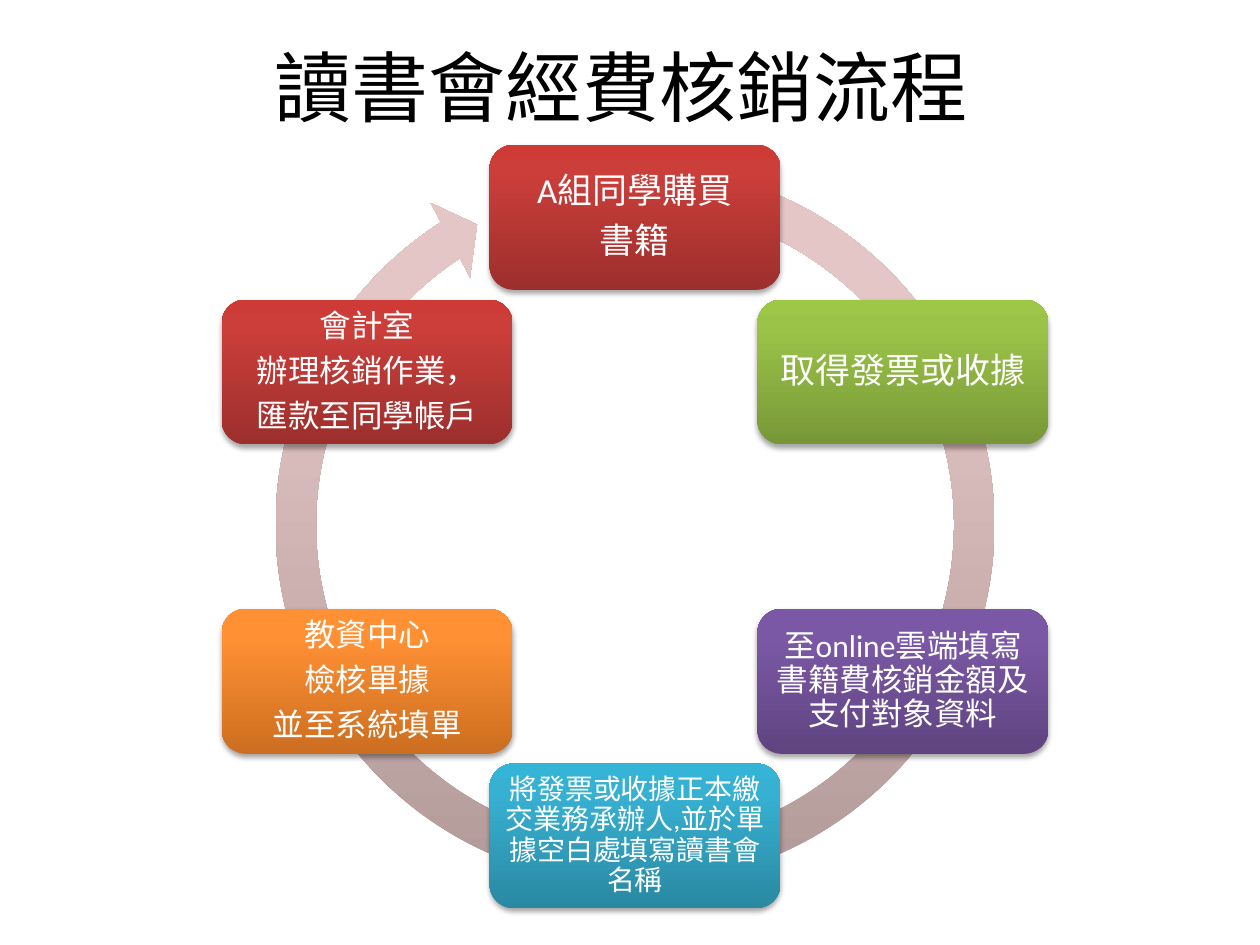
from copy import deepcopy
from math import cos, radians, sin

from lxml import etree
from pptx import Presentation
from pptx.dml.color import RGBColor
from pptx.enum import shapes, text
from pptx.oxml import ns
from pptx.util import Inches, Pt

WHITE = RGBColor(0xFF, 0xFF, 0xFF)
BLACK = RGBColor(0, 0, 0)


def shades(*codes):
    return [RGBColor.from_string(code) for code in codes]


# Gradients from bottom to top
RED = shades("9C2F2D", "CB3E3A", "CE3B37")
GREEN = shades("779737", "9BC348", "9DC746")
PURPLE = shades("5F4480", "7B58A6", "7C57A8")
BLUE = shades("2A88A2", "37B1D2", "34B4D6")
ORANGE = shades("CC6E20", "FF9034", "FF9136")
PINK = shades("B09998", "E5C6C6", "E6C7C6")
STOPS = (0, 0.8, 1)

# Content: steps run clockwise from the top
TITLE = "讀書會經費核銷流程"
STEPS = [
    (["A組同學購買", "書籍"], 20, RED),
    (["取得發票或收據"], 20, GREEN),
    (["至online雲端填寫書籍費核銷金額及支付對象資料"], 18, PURPLE),
    (["將發票或收據正本繳交業務承辦人,並於單據空白處填寫讀書會名稱"], 16, BLUE),
    (["教資中心", "檢核單據", "並至系統填單"], 18, ORANGE),
    (["會計室", "辦理核銷作業，", "匯款至同學帳戶"], 18, RED),
]

# Geometry in inches
MID_X, MID_Y, RADIUS = 5.04, 4.18, 2.455
BOX_W, BOX_H = 2.31, 1.15
RING = 6.05
ARROW = (0.053, 3.126, 142.221, 171.305, 0.055)


def paint(shape, colors):
    """Fill with a vertical gradient, without outline or shadow."""
    shape.fill.gradient()
    shape.fill.gradient_angle = 90
    stops = shape._element.spPr.find(".//" + ns.qn("a:gsLst"))
    stops.append(deepcopy(stops[-1]))
    for stop, place, color in zip(shape.fill.gradient_stops, STOPS, colors):
        stop.position = place
        stop.color.rgb = color
    shape.line.fill.background()
    shape.shadow.inherit = False


def shade(shape):
    """Add a soft shadow below the shape."""
    effects = shape._element.spPr.find(ns.qn("a:effectLst"))
    drop = etree.SubElement(
        effects, ns.qn("a:outerShdw"), blurRad=str(Pt(3.1)), dist=str(Pt(1.8)),
        dir="5400000", rotWithShape="0")
    color = etree.SubElement(drop, ns.qn("a:srgbClr"), val="000000")
    etree.SubElement(color, ns.qn("a:alpha"), val="35000")


def add_run(para, words, size, font, color):
    run = para.add_run()
    run.text = words
    run.font.size = Pt(size)
    run.font.name = font
    run.font.color.rgb = color
    return run


def add_step(slide, index, lines, size, colors):
    angle = radians(360 / len(STEPS) * index)
    left = MID_X + RADIUS * sin(angle) - BOX_W / 2
    top = MID_Y - RADIUS * cos(angle) - BOX_H / 2
    box = slide.shapes.add_shape(
        shapes.MSO_SHAPE.ROUNDED_RECTANGLE,
        Inches(left), Inches(top), Inches(BOX_W), Inches(BOX_H))
    paint(box, colors)
    shade(box)
    frame = box.text_frame
    frame.word_wrap = True
    frame.vertical_anchor = text.MSO_ANCHOR.MIDDLE
    inset = Inches(0.08 if size == 20 else 0.07)
    frame.margin_left = frame.margin_right = inset
    frame.margin_top = frame.margin_bottom = inset
    for row, words in enumerate(lines):
        para = frame.add_paragraph() if row else frame.paragraphs[0]
        para.alignment = text.PP_ALIGN.CENTER
        para.line_spacing = 0.9
        para.space_after = Pt(0.35 * size)
        add_run(para, words, size, "Calibri", WHITE)


def main():
    deck = Presentation()
    deck.slide_width, deck.slide_height = Inches(10), Inches(7.5)
    slide = deck.slides.add_slide(deck.slide_layouts[5])

    # Title
    title = slide.shapes.title
    title.left, title.top = Inches(0.43), Inches(0.13)
    title.width, title.height = Inches(9), Inches(1.1)
    frame = title.text_frame
    frame.vertical_anchor = text.MSO_ANCHOR.MIDDLE
    para = frame.paragraphs[0]
    para.alignment = text.PP_ALIGN.CENTER
    font = "Noto Sans CJK SC"
    run = add_run(para, TITLE, 44, font, BLACK)
    etree.SubElement(run.font._element, ns.qn("a:ea"), typeface=font)

    # Ring arrow behind the steps
    ring = slide.shapes.add_shape(
        shapes.MSO_SHAPE.CIRCULAR_ARROW,
        Inches(MID_X - RING / 2), Inches(1.14), Inches(RING), Inches(RING))
    for i, value in enumerate(ARROW):
        ring.adjustments[i] = value
    paint(ring, PINK)

    # Steps
    for index, step in enumerate(STEPS):
        add_step(slide, index, *step)

    deck.save("out.pptx")


if __name__ == "__main__":
    main()
